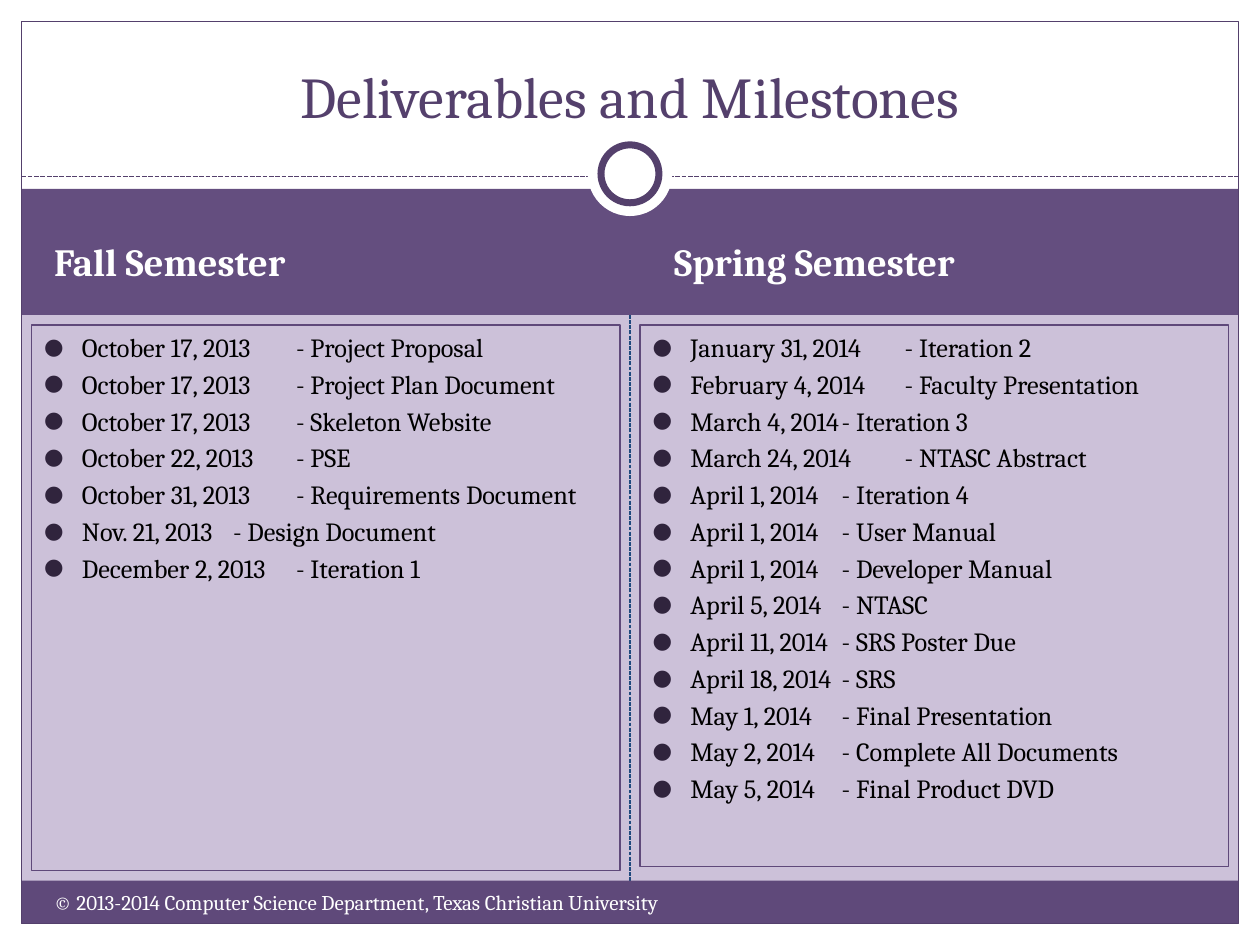
from dataclasses import dataclass

from lxml.etree import SubElement
from pptx import Presentation
from pptx.dml.color import RGBColor
from pptx.enum.dml import MSO_LINE
from pptx.enum.shapes import MSO_CONNECTOR, MSO_SHAPE
from pptx.enum.text import MSO_ANCHOR as Anchor, MSO_AUTO_SIZE, PP_ALIGN as Align
from pptx.oxml.ns import qn
from pptx.util import Inches, Pt


@dataclass(frozen=True)
class Theme:
    font: str = "Cambria"
    background: str = "CCC1D9"
    white: str = "FFFFFF"
    black: str = "000000"
    band: str = "644E7F"
    footer: str = "5F497A"
    accent: str = "54406C"
    divider: str = "1F497D"
    bullet: str = "30243D"
    title_size: float = 33
    heading_size: float = 22
    list_size: float = 15
    footer_size: float = 12
    thin_line: float = 0.75


THEME = Theme()
WIDTH, HEIGHT = 10, 7.5
MARGIN = 0.17
INNER_WIDTH = WIDTH - 2 * MARGIN
BAND_TOP, BAND_BOTTOM = 1.5, 2.5
FOOTER_TOP, FOOTER_BOTTOM = 6.99, HEIGHT - MARGIN
TEXT_LEFT = 0.33
HEADING_WIDTH = 4.42
LIST_LEFT, LIST_TOP, LIST_WIDTH = 0.25, 2.58, 4.67
INDENT = 0.3

FALL = [
    ("October 17, 2013", "Project Proposal"),
    ("October 17, 2013", "Project Plan Document"),
    ("October 17, 2013", "Skeleton Website"),
    ("October 22, 2013", "PSE"),
    ("October 31, 2013", "Requirements Document"),
    ("Nov. 21, 2013", "Design Document"),
    ("December 2, 2013", "Iteration 1"),
]
SPRING = [
    ("January 31, 2014", "Iteration 2"),
    ("February 4, 2014", "Faculty Presentation"),
    ("March 4, 2014", "Iteration 3"),
    ("March 24, 2014", "NTASC Abstract"),
    ("April 1, 2014", "Iteration 4"),
    ("April 1, 2014", "User Manual"),
    ("April 1, 2014", "Developer Manual"),
    ("April 5, 2014", "NTASC"),
    ("April 11, 2014", "SRS Poster Due"),
    ("April 18, 2014", "SRS"),
    ("May 1, 2014", "Final Presentation"),
    ("May 2, 2014", "Complete All Documents"),
    ("May 5, 2014", "Final Product DVD"),
]


def rgb(color):
    return RGBColor.from_string(color)


def style_line(line, color, width, dashed=False):
    line.color.rgb = rgb(color)
    line.width = Pt(width)
    if dashed:
        line.dash_style = MSO_LINE.SQUARE_DOT


def add_box(slide, left, top, width, height, fill=None, line=None,
            line_width=THEME.thin_line, kind=MSO_SHAPE.RECTANGLE):
    shape = slide.shapes.add_shape(kind, *map(Inches, (left, top, width, height)))
    shape.shadow.inherit = False
    if fill:
        shape.fill.solid()
        shape.fill.fore_color.rgb = rgb(fill)
    else:
        shape.fill.background()
    if line:
        style_line(shape.line, line, line_width)
    else:
        shape.line.fill.background()
    return shape


def add_circle(slide, center_y, diameter, **format):
    """Add a white circle centred across the slide."""
    add_box(slide, (WIDTH - diameter) / 2, center_y - diameter / 2, diameter, diameter,
            fill=THEME.white, kind=MSO_SHAPE.OVAL, **format)


def add_dashed_line(slide, start, end, color, width):
    line = slide.shapes.add_connector(MSO_CONNECTOR.STRAIGHT, *map(Inches, start + end))
    style_line(line.line, color, width, dashed=True)
    SubElement(line._element.spPr, qn("a:effectLst"))
    return line


def write_text(shape, lines, size, color, bold=False, align=Align.LEFT,
               anchor=Anchor.TOP, space_before=0, bulleted=False):
    frame = shape.text_frame
    frame.word_wrap = True
    frame.auto_size = MSO_AUTO_SIZE.NONE
    frame.vertical_anchor = anchor
    for index, text in enumerate(lines):
        paragraph = frame.add_paragraph() if index else frame.paragraphs[0]
        paragraph.alignment = align
        paragraph.space_before = Pt(space_before)
        if bulleted:
            add_bullet(paragraph)
        run = paragraph.add_run()
        run.text = text
        font = run.font
        font.name, font.size, font.bold = THEME.font, Pt(size), bold
        font.color.rgb = rgb(color)


def add_bullet(paragraph):
    properties = paragraph._p.get_or_add_pPr()
    properties.set("marL", str(Inches(INDENT)))
    properties.set("indent", str(-Inches(INDENT)))
    color = SubElement(properties, qn("a:buClr"))
    SubElement(color, qn("a:srgbClr"), val=THEME.bullet)
    SubElement(properties, qn("a:buSzPct"), val="85000")
    SubElement(properties, qn("a:buFont"), typeface=THEME.font)
    SubElement(properties, qn("a:buChar"), char="●")


def place(placeholder, left, top, width, height):
    """Move a placeholder and bring it in front of the frame."""
    placeholder.left, placeholder.top = Inches(left), Inches(top)
    placeholder.width, placeholder.height = Inches(width), Inches(height)
    tree = placeholder._element.getparent()
    tree.append(placeholder._element)


def draw_frame(slide):
    divider = add_dashed_line(slide, (WIDTH / 2, BAND_BOTTOM), (WIDTH / 2, FOOTER_TOP),
                              THEME.divider, THEME.thin_line)
    for area in ((0, 0, WIDTH, 1.58), (0, FOOTER_BOTTOM, WIDTH, MARGIN),
                 (0, 0, MARGIN, HEIGHT), (WIDTH - MARGIN, 0, MARGIN, HEIGHT)):
        add_box(slide, *area, fill=THEME.white)
    band = add_box(slide, MARGIN, BAND_TOP, INNER_WIDTH, BAND_BOTTOM - BAND_TOP,
                   fill=THEME.band)
    footer = add_box(slide, MARGIN, FOOTER_TOP, INNER_WIDTH, FOOTER_BOTTOM - FOOTER_TOP,
                     fill=THEME.footer)
    divider.begin_connect(band, 2)
    divider.end_connect(footer, 0)
    add_dashed_line(slide, (MARGIN, 1.4), (WIDTH - MARGIN, 1.4), THEME.accent, 0.9)
    add_box(slide, MARGIN, MARGIN, INNER_WIDTH, HEIGHT - 2 * MARGIN, line=THEME.accent)
    add_circle(slide, 1.38, 0.67)
    add_circle(slide, 1.38, 0.46, line=THEME.accent, line_width=4)


def fill_column(heading, body, title, milestones, heading_left, list_left, list_height):
    place(heading, heading_left, 1.67, HEADING_WIDTH, 0.8)
    write_text(heading, [title], THEME.heading_size, THEME.white, bold=True,
               anchor=Anchor.MIDDLE)
    place(body, list_left, LIST_TOP, LIST_WIDTH, list_height)
    style_line(body.line, THEME.footer, THEME.thin_line)
    write_text(body, [f"{date}\t- {item}" for date, item in milestones],
               THEME.list_size, THEME.black, space_before=3, bulleted=True)


def main():
    presentation = Presentation()
    presentation.slide_width, presentation.slide_height = Inches(WIDTH), Inches(HEIGHT)
    slide = presentation.slides.add_slide(presentation.slide_layouts.get_by_name("Comparison"))
    slide.background.fill.solid()
    slide.background.fill.fore_color.rgb = rgb(THEME.background)
    title, fall_heading, fall_list, spring_heading, spring_list = list(slide.placeholders)[:5]

    draw_frame(slide)
    fill_column(fall_heading, fall_list, "Fall Semester", FALL,
                TEXT_LEFT, LIST_LEFT, 4.33)
    fill_column(spring_heading, spring_list, "Spring Semester", SPRING,
                WIDTH - TEXT_LEFT - HEADING_WIDTH, WIDTH - LIST_LEFT - LIST_WIDTH, 4.3)
    copyright_box = slide.shapes.add_textbox(*map(Inches, (TEXT_LEFT, 7.01, 5.67, 0.4)))
    write_text(copyright_box,
               ["© 2013-2014 Computer Science Department, Texas Christian University"],
               THEME.footer_size, THEME.white)
    place(title, TEXT_LEFT, 0.25, WIDTH - 2 * TEXT_LEFT, 0.83)
    write_text(title, ["Deliverables and Milestones"], THEME.title_size, THEME.accent,
               align=Align.CENTER, anchor=Anchor.BOTTOM)
    presentation.save("out.pptx")


if __name__ == "__main__":
    main()
